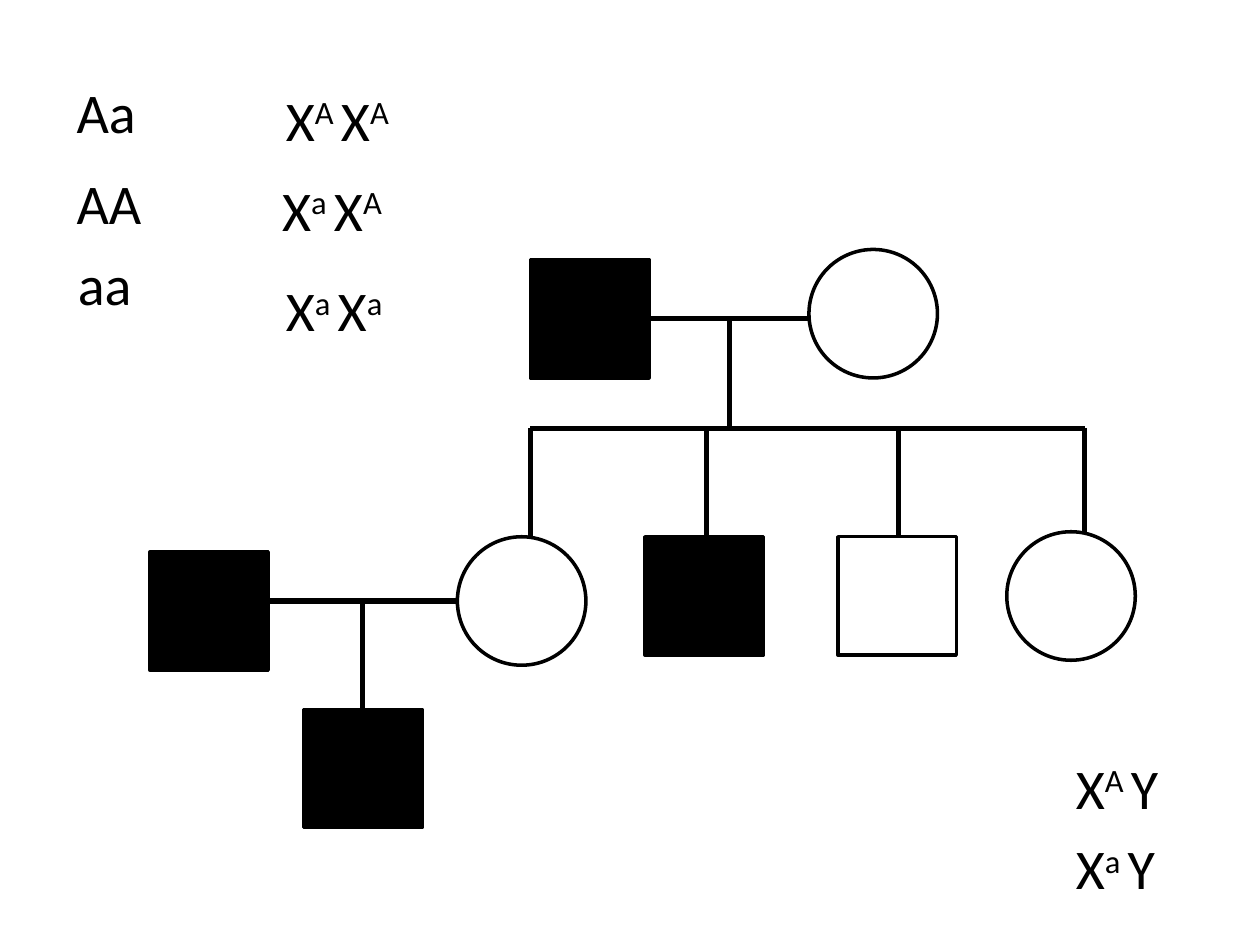
from pptx import Presentation
from pptx import util as u
from pptx.dml.color import RGBColor
from pptx.enum import shapes, text
from pptx.oxml.ns import qn
from lxml import etree

WIDE, HIGH = 10, 7.5
FONT = "Calibri"
INK = {"black": "000000", "white": "FFFFFF"}
SIZE = {"male": 0.94, "female": 1.02}
FORM = {"male": shapes.MSO_SHAPE.RECTANGLE, "female": shapes.MSO_SHAPE.OVAL}

# Sex, fill (black = affected), left, top
PEOPLE = [
    ("male", "black", 4.21, 2.06),
    ("female", "white", 6.42, 1.98),
    ("male", "black", 1.19, 4.38),
    ("female", "white", 3.63, 4.26),
    ("male", "black", 5.12, 4.26),
    ("male", "white", 6.65, 4.26),
    ("female", "white", 7.99, 4.22),
    ("male", "black", 2.41, 5.63),
]

# Heights of the couple lines and of the sibling bar
PAIR, BAR, PAIR2 = 2.53, 3.4, 4.77
DROPS = [4.21, 5.61, 7.13, 8.61]
LINES = [
    (5.16, PAIR, 6.65, PAIR),
    (5.79, PAIR, 5.79, BAR),
    (DROPS[0], BAR, DROPS[-1], BAR),
    (2.14, PAIR2, 3.63, PAIR2),
    (2.88, PAIR2, 2.88, 5.63),
] + [(x, BAR, x, 4.26) for x in DROPS]

# Left, top, width, runs; every second run is raised
GENES = [
    (0.51, 0.57, 0.94, ["Aa"]),
    (0.51, 1.29, 0.94, ["AA"]),
    (0.52, 1.93, 0.94, ["aa"]),
    (2.17, 0.63, 1.16, ["X", "A ", "X", "A"]),
    (2.14, 1.34, 1.16, ["X", "a ", "X", "A"]),
    (2.17, 2.14, 1.16, ["X", "a ", "X", "a"]),
    (8.44, 5.93, 1.16, ["X", "A ", "Y"]),
    (8.44, 6.57, 1.16, ["X", "a ", "Y"]),
]


def ink(name):
    return RGBColor.from_string(INK[name])


def stroke(item, width):
    item.line.color.rgb = ink("black")
    item.line.width = u.Pt(width)


def add_line(slide, ends):
    line = slide.shapes.add_connector(
        shapes.MSO_CONNECTOR.STRAIGHT, *map(u.Inches, ends))
    stroke(line, 3)
    etree.SubElement(line._element.spPr, qn("a:effectLst"))


def add_person(slide, sex, fill, left, top):
    side = SIZE[sex]
    person = slide.shapes.add_shape(
        FORM[sex], *map(u.Inches, (left, top, side, side)))
    person.shadow.inherit = False
    person.fill.solid()
    person.fill.fore_color.rgb = ink(fill)
    stroke(person, 2)


def add_gene(slide, left, top, width, runs):
    box = slide.shapes.add_textbox(*map(u.Inches, (left, top, width, 0.64)))
    frame = box.text_frame
    frame.word_wrap = True
    frame.auto_size = text.MSO_AUTO_SIZE.SHAPE_TO_FIT_TEXT
    for i, part in enumerate(runs):
        run = frame.paragraphs[0].add_run()
        run.text = part
        run.font.name = FONT
        run.font.size = u.Pt(32)
        run.font.color.rgb = ink("black")
        if i % 2:
            run.font._element.set("baseline", "30000")


def main():
    deck = Presentation()
    deck.slide_width, deck.slide_height = u.Inches(WIDE), u.Inches(HIGH)
    slide = deck.slides.add_slide(deck.slide_layouts[6])
    for ends in LINES:
        add_line(slide, ends)
    for person in PEOPLE:
        add_person(slide, *person)
    for gene in GENES:
        add_gene(slide, *gene)
    deck.save("out.pptx")


if __name__ == "__main__":
    main()
